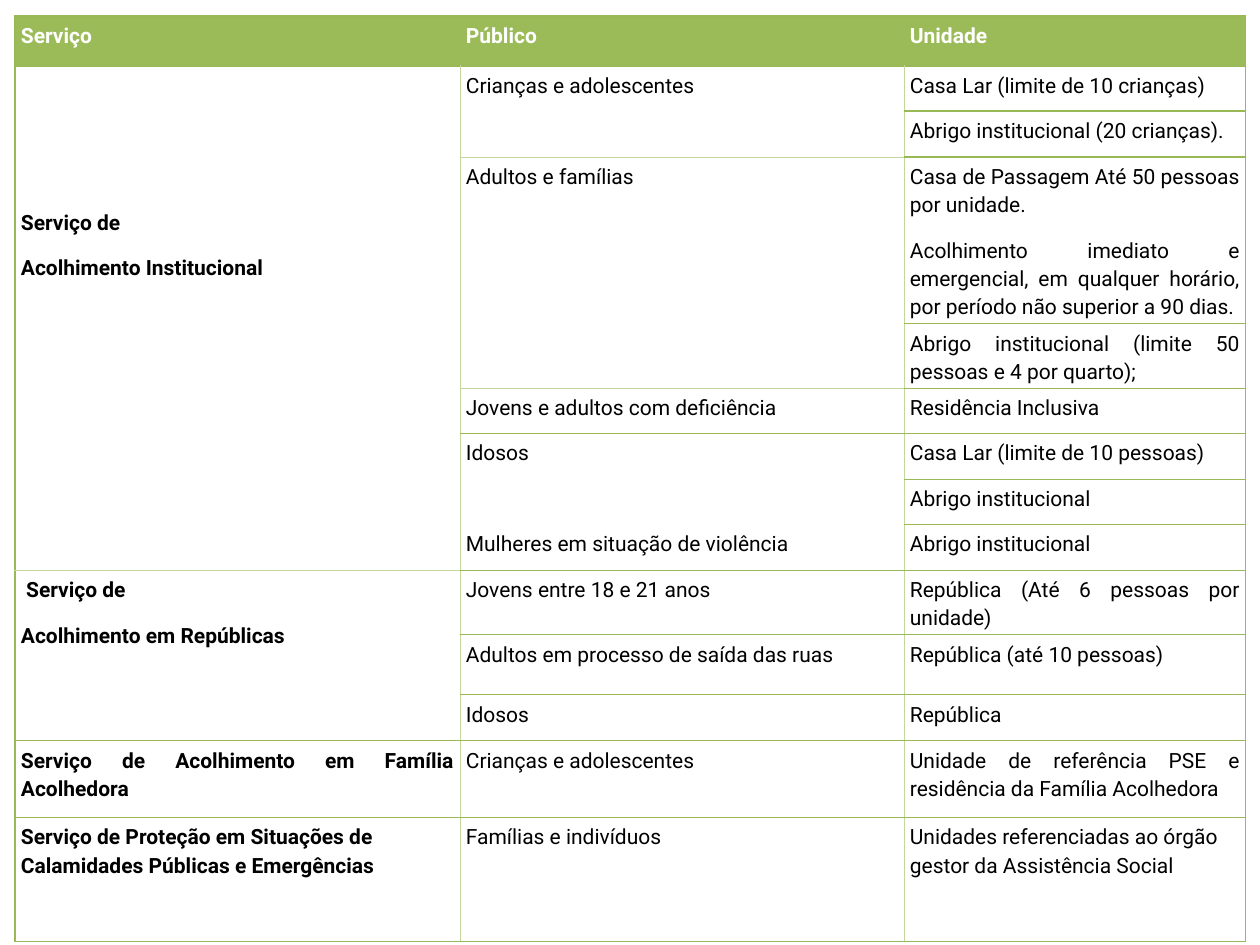
"""Build a one-slide table of social care services, their public and their units."""
import lxml.etree
import pptx
import pptx.dml.color
import pptx.enum.text
import pptx.oxml.ns
import pptx.util

PX = 914400 // 126
GREEN = pptx.dml.color.RGBColor(0x9B, 0xBB, 0x59)
LINE = pptx.dml.color.RGBColor(0x98, 0xB9, 0x55)
LIGHT = pptx.dml.color.RGBColor(0xC3, 0xD6, 0x9B)
WHITE = pptx.dml.color.RGBColor(0xFF, 0xFF, 0xFF)
BLACK = pptx.dml.color.RGBColor(0x00, 0x00, 0x00)
JUSTIFY = pptx.enum.text.PP_ALIGN.JUSTIFY
LEFT = pptx.enum.text.PP_ALIGN.LEFT

STRONG_EDGE = (LINE, 0.75)
LIGHT_EDGE = (LIGHT, 0.25)
SPECIAL_EDGES = {(3, 1): LIGHT_EDGE, (5, 1): LIGHT_EDGE, (9, 0): LIGHT_EDGE, (8, 1): None}

COLUMN_WIDTHS = [445, 444, 342]
ROW_HEIGHTS = [50, 45, 46, 166, 63, 45, 46, 45, 46, 63, 60, 46, 77, 124]
CENTRED_TOP = 141

COLUMNS = [
    [
        (1, "Serviço"),
        (8, "Serviço de\nAcolhimento Institucional"),
        (3, " Serviço de\nAcolhimento em Repúblicas"),
        (1, "Serviço de Acolhimento em Família Acolhedora"),
        (1, "Serviço de Proteção em Situações de Calamidades Públicas e Emergências"),
    ],
    [
        (1, "Público"),
        (2, "Crianças e adolescentes"),
        (2, "Adultos e famílias"),
        (1, "Jovens e adultos com deficiência"),
        (2, "Idosos"),
        (1, "Mulheres em situação de violência"),
        (1, "Jovens entre 18 e 21 anos"),
        (1, "Adultos em processo de saída das ruas"),
        (1, "Idosos"),
        (1, "Crianças e adolescentes"),
        (1, "Famílias e indivíduos"),
    ],
    [
        (1, "Unidade"),
        (1, "Casa Lar (limite de 10 crianças)"),
        (1, "Abrigo institucional (20 crianças)."),
        (1, "Casa de Passagem Até 50 pessoas por unidade.\n"
            "Acolhimento imediato e emergencial, em qualquer horário, "
            "por período não superior a 90 dias. "),
        (1, "Abrigo institucional (limite 50 pessoas e 4 por quarto);"),
        (1, "Residência Inclusiva"),
        (1, "Casa Lar (limite de 10 pessoas)"),
        (1, "Abrigo institucional"),
        (1, "Abrigo institucional"),
        (1, "República (Até 6 pessoas por unidade)"),
        (1, "República (até 10 pessoas)"),
        (1, "República"),
        (1, "Unidade de referência PSE e residência da Família Acolhedora"),
        (1, "Unidades referenciadas ao órgão gestor da Assistência Social"),
    ],
]


def set_format(target, values):
    for name, value in values.items():
        setattr(target, name, value)


class SlideBuilder:
    def __init__(self, presentation):
        self.slide = presentation.slides.add_slide(presentation.slide_layouts[6])
        self.font = {"name": "Roboto", "size": pptx.util.Pt(12)}
        self.paragraph = {"line_spacing": 1.15, "space_after": pptx.util.Pt(10)}
        self.margins = {"margin_left": 6 * PX, "margin_right": 6 * PX,
                        "margin_top": 4 * PX, "margin_bottom": 4 * PX}

    def table(self, left, top, widths, heights):
        frame = self.slide.shapes.add_table(
            len(heights), len(widths), left * PX, top * PX,
            sum(widths) * PX, sum(heights) * PX)
        table = frame.table
        table.horz_banding = False
        for column, width in zip(table.columns, widths):
            column.width = width * PX
        for row, height in zip(table.rows, heights):
            row.height = height * PX
        return table

    def text(self, cell, content, alignment, color, bold):
        set_format(cell, self.margins)
        cell.text_frame.text = content
        for paragraph in cell.text_frame.paragraphs:
            set_format(paragraph, {**self.paragraph, "alignment": alignment})
            for run in paragraph.runs:
                set_format(run.font, {**self.font, "bold": bold})
                run.font.color.rgb = color

    def borders(self, cell, edges):
        qn = pptx.oxml.ns.qn
        properties = cell._tc.get_or_add_tcPr()
        for side, edge in edges.items():
            line = lxml.etree.SubElement(properties, qn(f"a:ln{side}"))
            if edge is None:
                lxml.etree.SubElement(line, qn("a:noFill"))
                continue
            color, width = edge
            line.set("w", str(pptx.util.Pt(width)))
            fill = lxml.etree.SubElement(line, qn("a:solidFill"))
            lxml.etree.SubElement(fill, qn("a:srgbClr"), val=str(color))

    def block(self, table, row, column, span, content):
        cell = table.cell(row, column)
        last_row, last_column = len(table.rows) - 1, len(table.columns) - 1
        header = row == 0
        inner = None if header else LIGHT_EDGE
        edges = {
            "L": STRONG_EDGE if column == 0 else inner,
            "R": STRONG_EDGE if column == last_column else inner,
            "T": SPECIAL_EDGES.get((row, column), STRONG_EDGE),
            "B": SPECIAL_EDGES.get((row + span, column), STRONG_EDGE),
        }
        if span > 1:
            cell.merge(table.cell(row + span - 1, column))
        self.text(cell, content, LEFT if row == last_row else JUSTIFY,
                  WHITE if header else BLACK, header or column == 0)
        for covered in range(row, row + span):
            part = table.cell(covered, column)
            self.borders(part, edges)
            if header:
                part.fill.solid()
                part.fill.fore_color.rgb = GREEN
            else:
                part.fill.background()


def main():
    presentation = pptx.Presentation()
    set_format(presentation, {"slide_width": pptx.util.Inches(10),
                              "slide_height": pptx.util.Inches(7.5)})
    builder = SlideBuilder(presentation)
    services = builder.table(15, 16, COLUMN_WIDTHS, ROW_HEIGHTS)
    for column, blocks in enumerate(COLUMNS):
        row = 0
        for span, content in blocks:
            builder.block(services, row, column, span, content)
            row += span
    services.cell(1, 0).margin_top = CENTRED_TOP * PX
    presentation.save("out.pptx")


if __name__ == "__main__":
    main()
